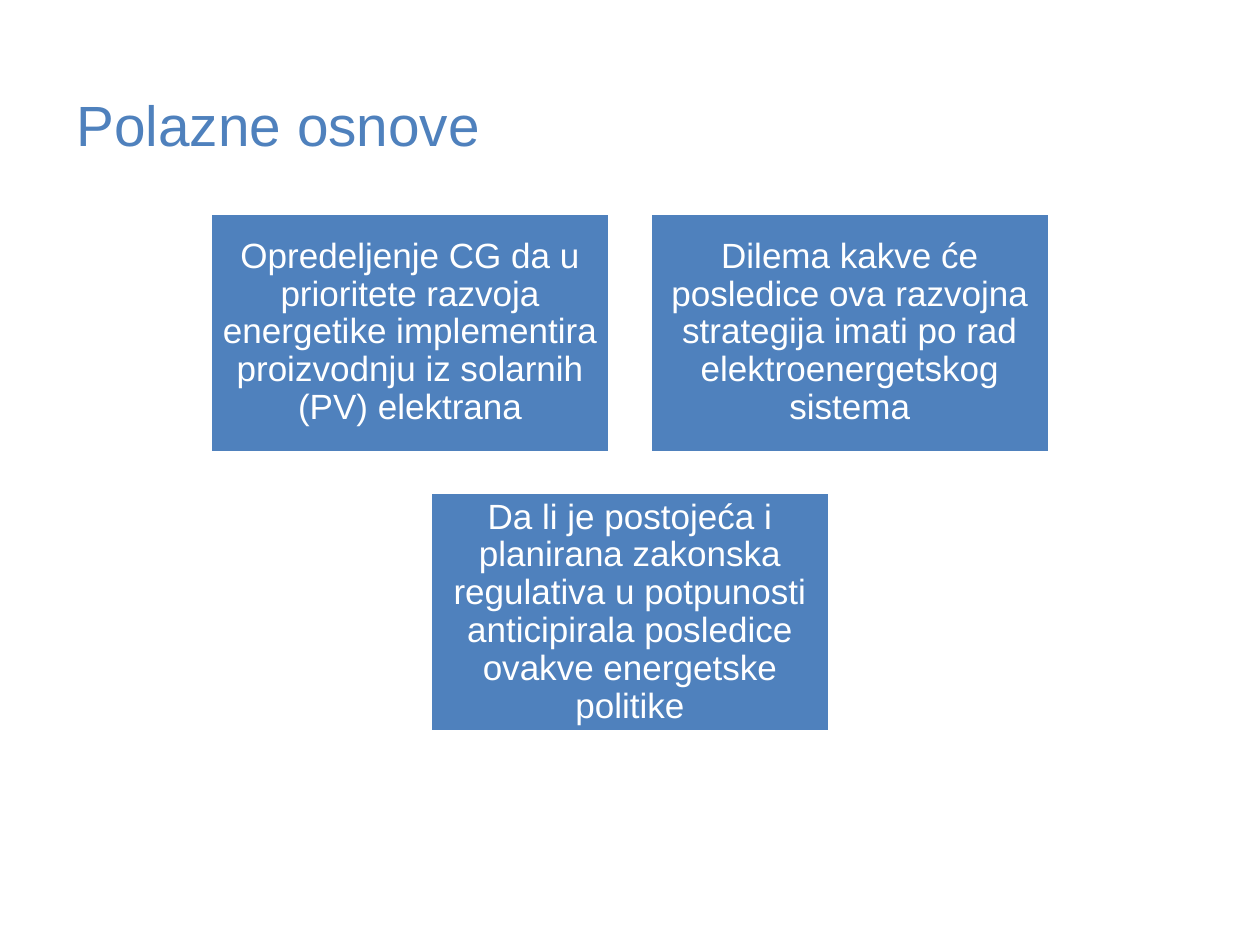
from pptx import Presentation
from pptx.dml.color import RGBColor
from pptx.enum.shapes import MSO_SHAPE
from pptx.enum.text import MSO_ANCHOR, PP_ALIGN
from pptx.util import Inches, Pt

# Content: title, then rows of boxes
TITLE = "Polazne osnove"
ROWS = [
    ["Opredeljenje CG da u prioritete razvoja energetike implementira "
     "proizvodnju iz solarnih (PV) elektrana",
     "Dilema kakve će posledice ova razvojna strategija imati po rad "
     "elektroenergetskog sistema"],
    ["Da li je postojeća i planirana zakonska regulativa u potpunosti "
     "anticipirala posledice ovakve energetske politike"],
]

THEME = {
    "font": "Arial",
    "blue": RGBColor(0x4F, 0x81, 0xBD),
    "white": RGBColor(0xFF, 0xFF, 0xFF),
    "head": Pt(32.4),
    "body": Pt(20),
    "edge": Pt(2),
}

# Grid, in inches
WIDE, HIGH = 10, 7.5
BOX_W, BOX_H, GAP, TOP = 3.17, 1.9, 0.32, 1.69
PAD = Inches(0.08)


def apply(item, form):
    for key, val in form.items():
        setattr(item, key, val)


def write(shape, text, size, color, frame, para):
    body = shape.text_frame
    apply(body, {"word_wrap": True, **frame})
    line = body.paragraphs[0]
    apply(line, para)
    run = line.add_run()
    run.text = text
    apply(run.font, {"name": THEME["font"], "size": size})
    run.font.color.rgb = color


deck = Presentation()
apply(deck, {"slide_width": Inches(WIDE), "slide_height": Inches(HIGH)})
slide = deck.slides.add_slide(deck.slide_layouts[6])

# Title, resting on the bottom of its band
head = slide.shapes.add_textbox(Inches(0.51), 0, Inches(9), Inches(1.25))
write(head, TITLE, THEME["head"], THEME["blue"],
      {"vertical_anchor": MSO_ANCHOR.BOTTOM, "margin_bottom": 0},
      {"alignment": PP_ALIGN.LEFT})

# Boxes, each row centred on the slide
FRAME = {"vertical_anchor": MSO_ANCHOR.MIDDLE, "margin_left": PAD,
         "margin_right": PAD, "margin_top": PAD, "margin_bottom": PAD}
PARA = {"alignment": PP_ALIGN.CENTER, "line_spacing": 0.9}

for row, texts in enumerate(ROWS):
    span = len(texts) * (BOX_W + GAP) - GAP
    y = TOP + row * (BOX_H + GAP)
    for col, text in enumerate(texts):
        x = (WIDE - span) / 2 + col * (BOX_W + GAP)
        box = slide.shapes.add_shape(
            MSO_SHAPE.RECTANGLE, Inches(x), Inches(y),
            Inches(BOX_W), Inches(BOX_H))
        box.shadow.inherit = False
        box.fill.solid()
        box.fill.fore_color.rgb = THEME["blue"]
        box.line.color.rgb = THEME["white"]
        box.line.width = THEME["edge"]
        write(box, text, THEME["body"], THEME["white"], FRAME, PARA)

deck.save("out.pptx")
